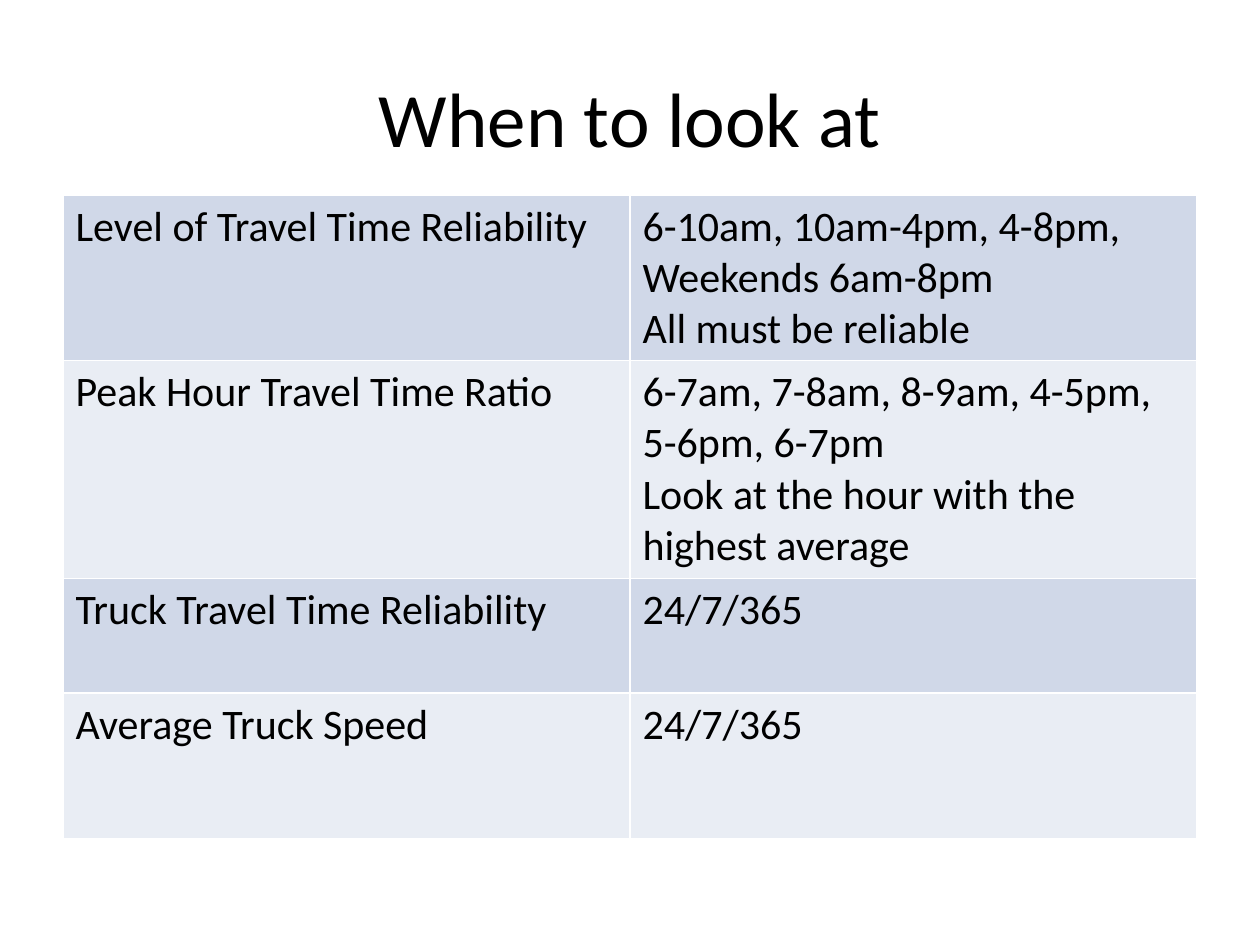
from pptx import Presentation
from pptx.dml.color import RGBColor
from pptx.enum.text import MSO_ANCHOR, PP_ALIGN
from pptx.oxml.ns import qn
from pptx.util import Inches, Pt
from lxml.etree import SubElement

BLACK = RGBColor(0x00, 0x00, 0x00)
WHITE = RGBColor(0xFF, 0xFF, 0xFF)
BANDS = [RGBColor(0xD0, 0xD8, 0xE8), RGBColor(0xE9, 0xED, 0xF4)]
FONT = "Calibri"
TIMES = [
    ("Level of Travel Time Reliability",
     "6-10am, 10am-4pm, 4-8pm, Weekends 6am-8pm\nAll must be reliable"),
    ("Peak Hour Travel Time Ratio",
     "6-7am, 7-8am, 8-9am, 4-5pm, 5-6pm, 6-7pm\n"
     "Look at the hour with the highest average"),
    ("Truck Travel Time Reliability", "24/7/365"),
    ("Average Truck Speed", "24/7/365"),
]
HEIGHTS = [1.31, 1.73, 0.91, 1.16]


def style(frame, size):
    for para in frame.paragraphs:
        for run in para.runs:
            run.font.name = FONT
            run.font.size = Pt(size)
            run.font.color.rgb = BLACK


def border(cell):
    props = cell._tc.get_or_add_tcPr()
    for side in ("lnL", "lnR", "lnT", "lnB"):
        line = SubElement(props, qn(f"a:{side}"), w=str(Pt(1)))
        fill = SubElement(line, qn("a:solidFill"))
        SubElement(fill, qn("a:srgbClr"), val=str(WHITE))


def add_title(slide, left, top, width, height):
    box = slide.shapes.add_textbox(left, top, width, height)
    frame = box.text_frame
    frame.word_wrap = True
    frame.vertical_anchor = MSO_ANCHOR.MIDDLE
    frame.text = "When to look at"
    frame.paragraphs[0].alignment = PP_ALIGN.CENTER
    style(frame, 44)


def add_times(slide, left, top, width, height):
    shape = slide.shapes.add_table(len(TIMES), 2, left, top, width, height)
    table = shape.table
    table.first_row = False
    table.horz_banding = False
    for r, (row, texts) in enumerate(zip(table.rows, TIMES)):
        row.height = Inches(HEIGHTS[r])
        for cell, text in zip(row.cells, texts):
            border(cell)
            cell.fill.solid()
            cell.fill.fore_color.rgb = BANDS[r % 2]
            cell.text_frame.text = text
            style(cell.text_frame, 24)


def main():
    deck = Presentation()
    deck.slide_width = Inches(10)
    deck.slide_height = Inches(7.5)
    slide = deck.slides.add_slide(deck.slide_layouts[6])
    left, width = Inches(0.5), Inches(9)
    add_title(slide, left, Inches(0.3), width, Inches(1.25))
    add_times(slide, left, Inches(1.55), width, Inches(sum(HEIGHTS)))
    deck.save("out.pptx")


if __name__ == "__main__":
    main()
